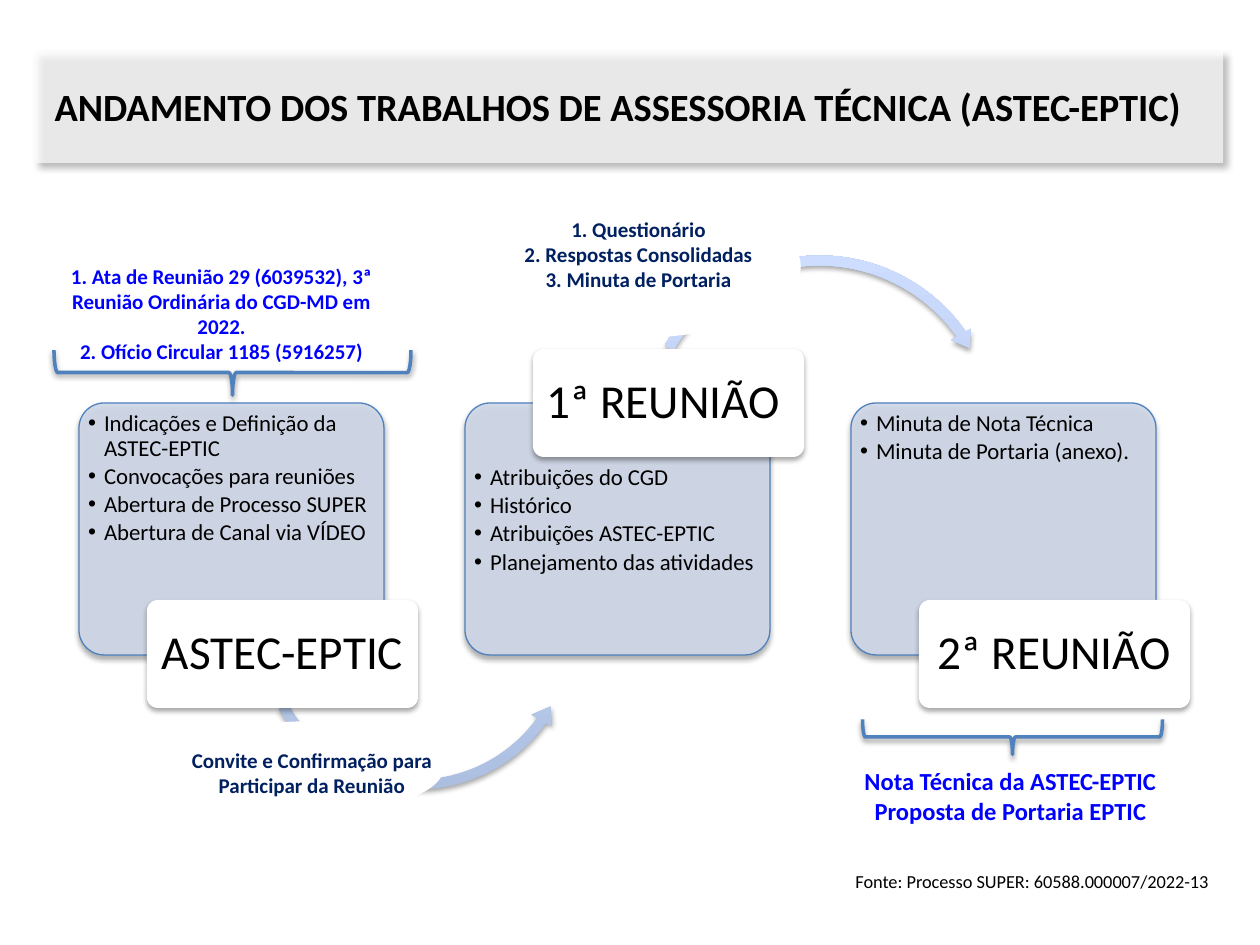
from lxml import etree
from pptx import Presentation
from pptx import util as u
from pptx.dml.color import RGBColor
from pptx.enum import shapes, text
from pptx.oxml.ns import qn

SCALE = 914400 / 126  # EMU in one px
COLORS = {
    "black": "000000", "white": "FFFFFF", "panel": "D0D8E8", "edge": "4F81BD",
    "arrow_dark": "ADBFE1", "arrow_light": "CCDDFF", "link": "0000FF", "navy": "002060",
}
SHAPE = shapes.MSO_SHAPE
ALIGN = text.PP_ALIGN
SOFT = dict(alpha=35, blur=3.1, dist=1.8, angle=90)
BRACE = dict(alpha=38, blur=3.1, dist=1.6, angle=90)
BAR = dict(alpha=40, blur=4, dist=3, angle=45)


def px(value):
    return u.Emu(round(value * SCALE))


def rgb(name):
    return RGBColor.from_string(COLORS[name])


def set_all(target, values):
    for name, value in values.items():
        setattr(target, name, value)


def add_alpha(color_element, percent):
    etree.SubElement(color_element, qn("a:alpha"), val=str(percent * 1000))


class SlideBuilder:
    font = "Calibri"

    def __init__(self, slide):
        self.slide = slide

    def shape(self, kind, frame, fill=None, alpha=None, line=None, width=1,
              shadow=None, adjust=(), rotation=0):
        item = self.slide.shapes.add_shape(kind, *map(px, frame))
        item.rotation = rotation
        for index, value in enumerate(adjust):
            item.adjustments[index] = value
        if fill == "gradient":
            item.fill.gradient()
            item.fill.gradient_angle = 90
            for stop, name in zip(item.fill.gradient_stops, ("arrow_dark", "arrow_light")):
                stop.color.rgb = rgb(name)
        elif fill:
            item.fill.solid()
            item.fill.fore_color.rgb = rgb(fill)
            if alpha:
                add_alpha(item._element.spPr.find(".//" + qn("a:srgbClr")), alpha)
        else:
            item.fill.background()
        if line:
            item.line.color.rgb = rgb(line)
            item.line.width = u.Pt(width)
        else:
            item.line.fill.background()
        item.shadow.inherit = False
        if shadow:
            self.cast_shadow(item, **shadow)
        return item

    def cast_shadow(self, item, alpha, blur, dist, angle):
        effects = item._element.spPr.find(qn("a:effectLst"))
        outer = etree.SubElement(
            effects, qn("a:outerShdw"), blurRad=str(u.Pt(blur)), dist=str(u.Pt(dist)),
            dir=str(angle * 60000), algn="ctr", rotWithShape="0")
        add_alpha(etree.SubElement(outer, qn("a:srgbClr"), val=COLORS["black"]), alpha)

    def text(self, frame, lines, size, color="black", bold=False, insets=None,
             anchor=text.MSO_ANCHOR.TOP, grow=False, bullet=False, indent=0, **layout):
        box = self.slide.shapes.add_textbox(*map(px, frame))
        body = box.text_frame
        fit = text.MSO_AUTO_SIZE
        set_all(body, dict(word_wrap=True, vertical_anchor=anchor,
                           auto_size=fit.SHAPE_TO_FIT_TEXT if grow else fit.NONE))
        if insets:
            across, down = map(px, insets)
            set_all(body, dict(margin_left=across, margin_right=across,
                               margin_top=down, margin_bottom=down))
        for index, words in enumerate(lines):
            para = body.paragraphs[0] if index == 0 else body.add_paragraph()
            set_all(para, layout)
            if indent:
                para._p.get_or_add_pPr().set("marL", str(px(indent)))
            if bullet:
                props = para._p.get_or_add_pPr()
                props.set("indent", str(-px(indent)))
                etree.SubElement(props, qn("a:buFont"), typeface="Arial")
                etree.SubElement(props, qn("a:buChar"), char="•")
            self.span(para, words, size, color, bold)
        return box

    def span(self, para, words, size, color="black", bold=False):
        span = para.add_run()
        span.text = words
        set_all(span.font, dict(name=self.font, size=u.Pt(size), bold=bold))
        span.font.color.rgb = rgb(color)

    def title(self, frame, words, size):
        title = self.slide.shapes.title
        set_all(title, dict(zip(("left", "top", "width", "height"), map(px, frame))))
        set_all(title.text_frame, dict(word_wrap=True, vertical_anchor=text.MSO_ANCHOR.MIDDLE,
                                       auto_size=text.MSO_AUTO_SIZE.NONE))
        para = title.text_frame.paragraphs[0]
        para.alignment = ALIGN.LEFT
        self.span(para, words, size, bold=True)
        return title

    def stage(self, left, items, items_top, tag, tag_top, arrow):
        self.shape(SHAPE.ROUNDED_RECTANGLE, (left, 403, 305, 252), "panel", alpha=90,
                   line="edge", width=0.75, shadow=SOFT, adjust=[0.1])
        self.text((left + 5, items_top, 294, 186), items, 13, insets=(4, 4), bullet=True,
                  indent=16, level=1, line_spacing=0.9, space_after=u.Pt(2))
        if arrow:
            kind, frame, adjust = arrow
            self.shape(kind, frame, "gradient", shadow=SOFT, adjust=adjust)
        self.shape(SHAPE.ROUNDED_RECTANGLE, (left + 68, tag_top, 271, 108), "white",
                   shadow=SOFT, adjust=[0.1])
        self.text((left + 71, tag_top + 3, 265, 102), [tag], 27, insets=(8, 5),
                  anchor=text.MSO_ANCHOR.MIDDLE, alignment=ALIGN.CENTER, line_spacing=0.9)

    def note(self, frame, lines, color, size=12):
        self.text(frame, lines, size, color, bold=True, grow=True, alignment=ALIGN.CENTER)

    def brace(self, frame):
        self.shape(SHAPE.RIGHT_BRACE, frame, line="edge", width=2, shadow=BRACE, rotation=90)

    def mask(self, frame):
        self.shape(SHAPE.OVAL, frame, "white", line="white", width=2)


def main():
    deck = Presentation()
    deck.slide_width, deck.slide_height = px(1260), px(945)
    page = SlideBuilder(deck.slides.add_slide(deck.slide_layouts[5]))

    # Title over its translucent bar
    title = page.title((42, 62, 1184, 89),
                       "ANDAMENTO DOS TRABALHOS DE ASSESSORIA TÉCNICA (ASTEC-EPTIC)", 22)
    bar = page.shape(SHAPE.ROUND_2_DIAG_RECTANGLE, (35, 52, 1188, 111), "white", alpha=68,
                     shadow=BAR, adjust=[0, 0])
    title._element.addprevious(bar._element)

    # Three stages, linked by curved arrows
    stages = [
        (["Indicações e Definição da ASTEC-EPTIC", "Convocações para reuniões",
          "Abertura de Processo SUPER", "Abertura de Canal via VÍDEO"],
         408, "ASTEC-EPTIC", 600,
         (SHAPE.LEFT_CIRCULAR_ARROW, (252, 466, 330, 330),
          [0.03, 3.647, 21.402, 90.245, 0.035])),
        (["Atribuições do CGD", "Histórico", "Atribuições ASTEC-EPTIC",
          "Planejamento das atividades"],
         462, "1ª REUNIÃO ", 349,
         (SHAPE.CIRCULAR_ARROW, (635, 249, 369, 369),
          [0.027, 3.238, 195.007, 125.755, 0.031])),
        (["Minuta de Nota Técnica", "Minuta de Portaria (anexo)."],
         408, "2ª REUNIÃO", 600, None),
    ]
    for index, stage in enumerate(stages):
        page.stage(79 + 386 * index, *stage)

    # Documents before the first stage
    page.note((37, 257, 369, 115),
              ["1. Ata de Reunião 29 (6039532), 3ª Reunião Ordinária do CGD-MD em 2022.",
               "2. Ofício Circular 1185 (5916257)"], "link")
    page.brace((210, 194, 45, 357))

    # Label on the upper arrow
    page.mask((478, 197, 321, 139))
    page.note((484, 210, 309, 115),
              ["1. Questionário", "2. Respostas Consolidadas", "3. Minuta de Portaria"], "navy")

    # Results of the last stage
    page.brace((995, 587, 35, 300))
    page.note((833, 760, 355, 102),
              ["Nota Técnica da ASTEC-EPTIC", "Proposta de Portaria EPTIC"], "link", 14)

    # Label on the lower arrow
    page.mask((180, 723, 262, 89))
    page.note((154, 741, 316, 63),
              ["Convite e Confirmação para Participar da Reunião"], "navy")

    # Source line
    page.text((780, 864, 447, 35), ["Fonte: Processo SUPER: 60588.000007/2022-13"], 10.5,
              grow=True, indent=63, level=1, alignment=ALIGN.JUSTIFY)

    deck.save("out.pptx")


if __name__ == "__main__":
    main()
